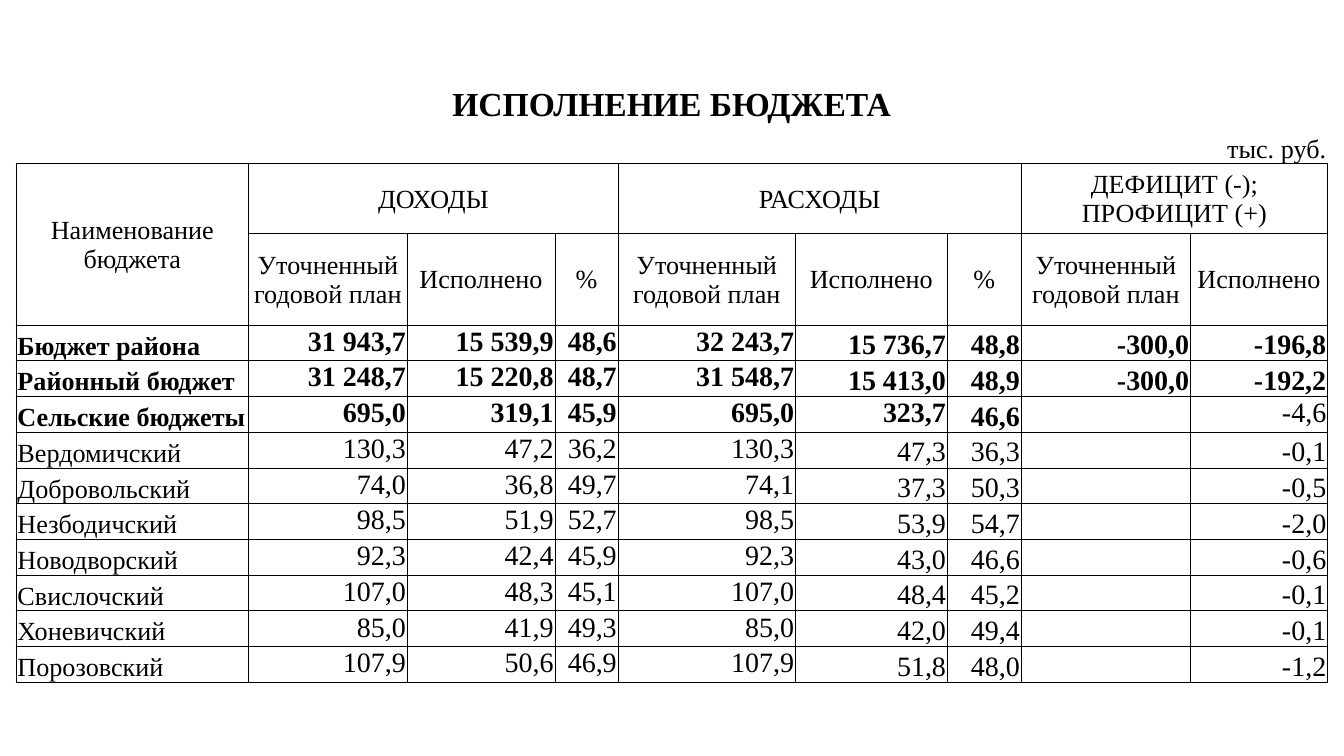
from lxml import etree
from pptx import Presentation
from pptx import util as u
from pptx.dml.color import RGBColor
from pptx.enum import text
from pptx.oxml import ns

COLORS = {"ink": "000000"}
FONT = "Times New Roman"
LEFT, CENTER, RIGHT = text.PP_ALIGN.LEFT, text.PP_ALIGN.CENTER, text.PP_ALIGN.RIGHT
TOP, MIDDLE, BOTTOM = text.MSO_ANCHOR.TOP, text.MSO_ANCHOR.MIDDLE, text.MSO_ANCHOR.BOTTOM

COLUMNS = [1.73, 1.01, 0.17, 0.73, 0.37, 0.47, 1.32, 0.9, 0.23, 0.55, 1.26, 0.12, 0.9]
ROWS = [0.34, 0.27, 0.52, 0.68] + [2.66 / 10] * 10
FIELD_STARTS = [0, 1, 3, 5, 6, 7, 9, 10, 11]
WIDE_FIELDS = [1, 3, 7, 11]
FIRST_BUDGET = 4

GROUPS = [(1, 5, "ДОХОДЫ"), (6, 9, "РАСХОДЫ"), (10, 12, "ДЕФИЦИТ (-); ПРОФИЦИТ (+)")]
PLAN, DONE = "Уточненный годовой план", "Исполнено"
FIELDS = [PLAN, DONE, "%", PLAN, DONE, "%", PLAN, DONE]
BUDGETS = [
    ["Бюджет района", "31 943,7", "15 539,9", "48,6", "32 243,7", "15 736,7", "48,8", "-300,0", "-196,8"],
    ["Районный бюджет", "31 248,7", "15 220,8", "48,7", "31 548,7", "15 413,0", "48,9", "-300,0", "-192,2"],
    ["Сельские бюджеты", "695,0", "319,1", "45,9", "695,0", "323,7", "46,6", "", "-4,6"],
    ["Вердомичский", "130,3", "47,2", "36,2", "130,3", "47,3", "36,3", "", "-0,1"],
    ["Добровольский", "74,0", "36,8", "49,7", "74,1", "37,3", "50,3", "", "-0,5"],
    ["Незбодичский", "98,5", "51,9", "52,7", "98,5", "53,9", "54,7", "", "-2,0"],
    ["Новодворский", "92,3", "42,4", "45,9", "92,3", "43,0", "46,6", "", "-0,6"],
    ["Свислочский", "107,0", "48,3", "45,1", "107,0", "48,4", "45,2", "", "-0,1"],
    ["Хоневичский", "85,0", "41,9", "49,3", "85,0", "42,0", "49,4", "", "-0,1"],
    ["Порозовский", "107,9", "50,6", "46,9", "107,9", "51,8", "48,0", "", "-1,2"],
]


def write(cell, words, align=CENTER, anchor=MIDDLE, size=14, bold=False):
    cell.vertical_anchor = anchor
    paragraph = cell.text_frame.paragraphs[0]
    paragraph.alignment = align
    if not words:
        return
    run = paragraph.add_run()
    run.text = words
    run.font.name = FONT
    run.font.size = u.Pt(size)
    run.font.bold = bold
    run.font.color.rgb = RGBColor.from_string(COLORS["ink"])


def set_borders(cell, ruled_sides):
    properties = cell._tc.get_or_add_tcPr()
    for position, side in enumerate("LRTB"):
        line = etree.Element(ns.qn(f"a:ln{side}"), w=str(u.Pt(0.5)))
        if side in ruled_sides:
            fill = etree.SubElement(line, ns.qn("a:solidFill"))
            etree.SubElement(fill, ns.qn("a:srgbClr"), val=COLORS["ink"])
        else:
            etree.SubElement(line, ns.qn("a:noFill"))
        properties.insert(position, line)


deck = Presentation()
deck.slide_width = u.Inches(10)
deck.slide_height = deck.slide_width * 9 // 16
slide = deck.slides.add_slide(deck.slide_layouts[6])
budget = slide.shapes.add_table(
    len(ROWS), len(COLUMNS), u.Inches(0.12), u.Inches(0.61),
    u.Inches(sum(COLUMNS)), u.Inches(sum(ROWS)),
).table
budget.first_row = False
budget.horz_banding = False
for column, width in zip(budget.columns, COLUMNS):
    column.width = u.Inches(width)
for row, height in zip(budget.rows, ROWS):
    row.height = u.Inches(height)

for r in range(len(ROWS)):
    for c in range(len(COLUMNS)):
        cell = budget.cell(r, c)
        cell.margin_left = cell.margin_right = cell.margin_top = u.Inches(0.01)
        cell.margin_bottom = 0
        cell.fill.background()
        set_borders(cell, ["", "B"][r] if r < 2 else "LRTB")
        ending = etree.SubElement(cell.text_frame.paragraphs[0]._p, ns.qn("a:endParaRPr"))
        ending.set("sz", "1400")

spans = [(0, 0, 0, 12), (2, 0, 3, 0)]
spans += [(1, c, 1, c + 1) for c in (2, 4, 8, 10)]
spans += [(2, first, 2, last) for first, last, _ in GROUPS]
spans += [(r, c, r, c + 1) for r in range(3, len(ROWS)) for c in WIDE_FIELDS]
for top, left, bottom, right in spans:
    budget.cell(top, left).merge(budget.cell(bottom, right))

write(budget.cell(0, 0), "ИСПОЛНЕНИЕ БЮДЖЕТА", size=18, bold=True)
write(budget.cell(1, 12), "тыс. руб.", RIGHT, BOTTOM)
write(budget.cell(2, 0), "Наименование бюджета")
for first, last, group in GROUPS:
    write(budget.cell(2, first), group)
for c, field in zip(FIELD_STARTS[1:], FIELDS):
    write(budget.cell(3, c), field)

for index, (name, *amounts) in enumerate(BUDGETS):
    r = FIRST_BUDGET + index
    is_total = index < 3
    is_rural_total = index == 2
    write(budget.cell(r, 0), name, LEFT, BOTTOM, bold=is_total)
    for c, amount in zip(FIELD_STARTS[1:], amounts):
        at_top = c < 7 or (is_rural_total and c in (7, 11))
        bold = is_total and not (is_rural_total and c == 11)
        write(budget.cell(r, c), amount, RIGHT, TOP if at_top else BOTTOM, 15, bold)

deck.save("out.pptx")
